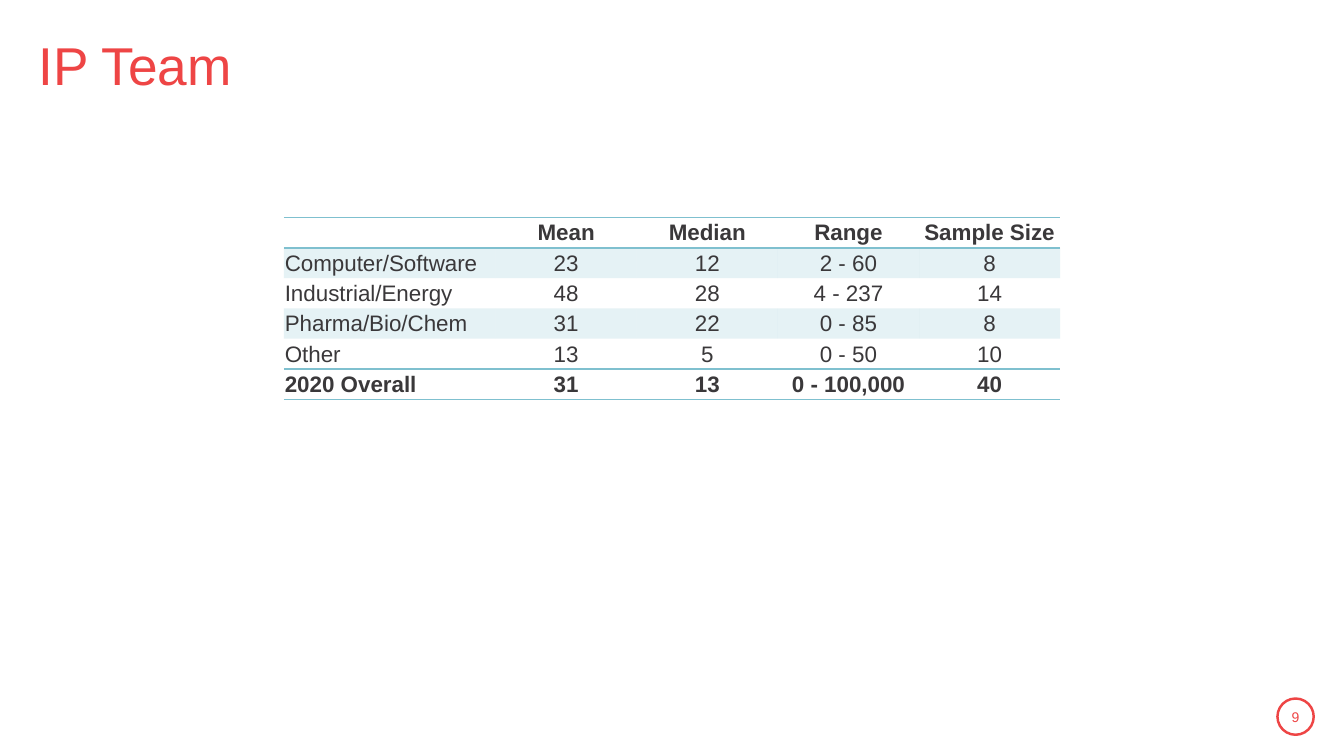
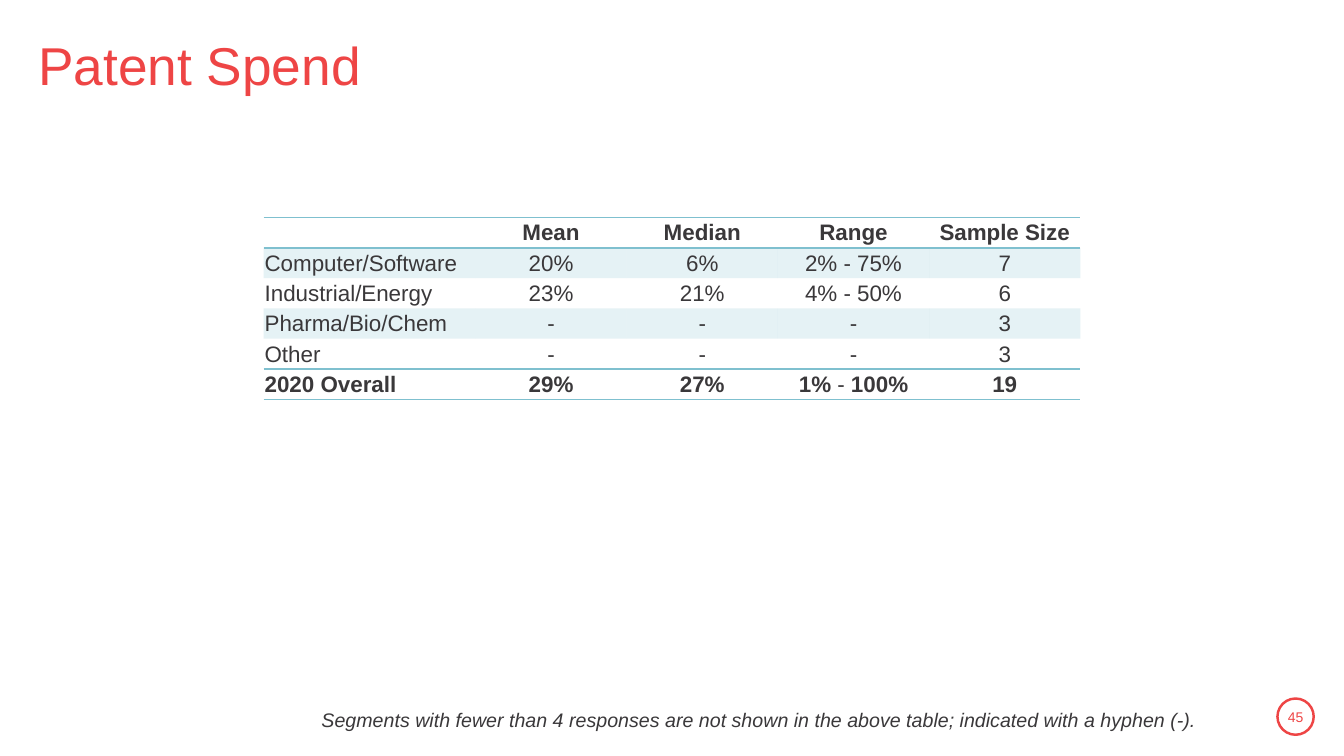
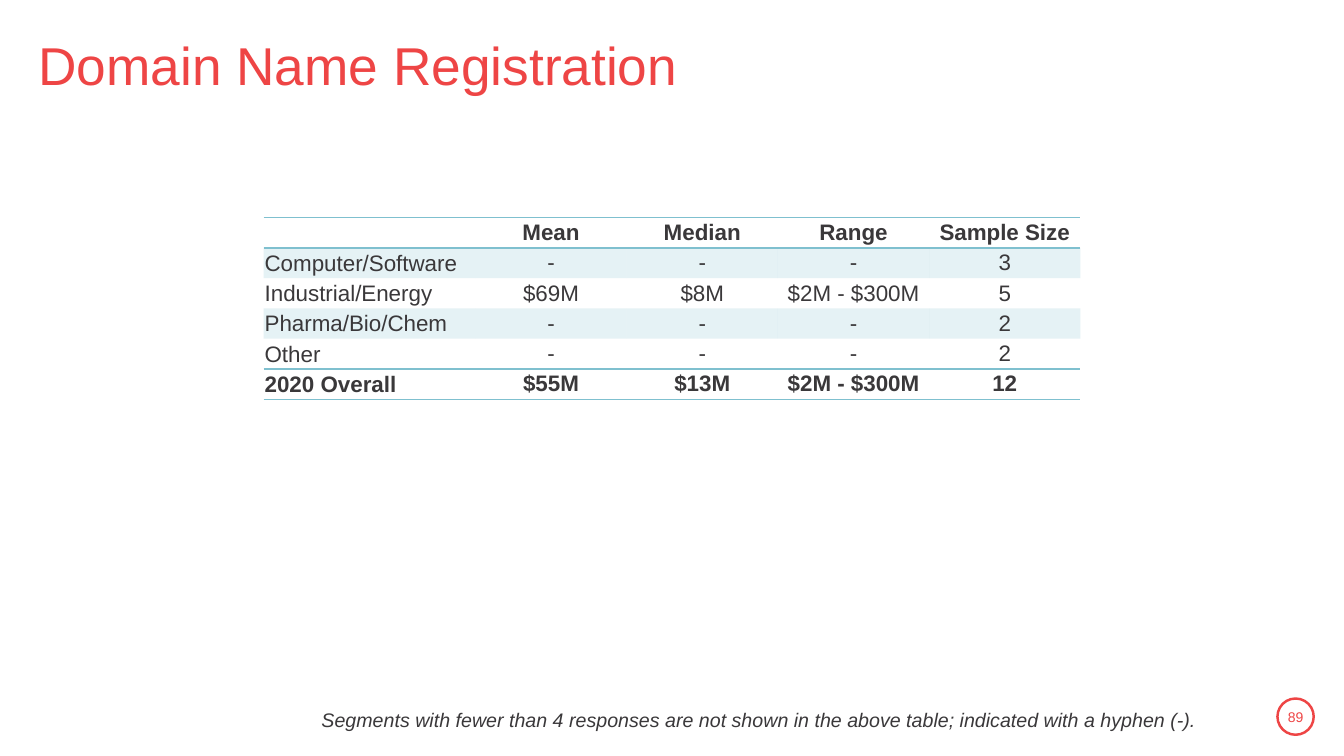
from dataclasses import dataclass

from lxml import etree
from pptx import Presentation
from pptx import util as u
from pptx.dml.color import RGBColor
from pptx.enum import shapes, text
from pptx.oxml import ns


@dataclass(frozen=True)
class Theme:
    font: str = "Arial"
    red: str = "EE4545"
    ink: str = "3A383A"
    teal: str = "7FC0CF"
    band_alpha: int = 20
    title_size: int = 38
    table_size: int = 16
    note_size: int = 14
    number_size: int = 10
    rule_width: float = 1
    badge_width: float = 1.75


@dataclass(frozen=True)
class Box:
    left: float
    top: float
    width: float
    height: float

    def lengths(self):
        return [u.Inches(n) for n in (self.left, self.top, self.width, self.height)]

    def centred(self, width, height):
        return Box(self.left + (self.width - width) / 2,
                   self.top + (self.height - height) / 2, width, height)


THEME = Theme()
PAGE = Box(0, 0, 13.33, 7.5)
TITLE = Box(0.28, 0.24, 12.82, 0.87)
BADGE = Box(12.67, 6.93, 0.36, 0.36)
NOTE = Box(3.09, 6.97, 8.95, 0.34)
TABLE_TOP = 2.16
ROW_HEIGHT = 0.3
LABEL_WIDTH = 2.1
CELL_INSET = 0.01
NO_GRID_STYLE = "{2D5ABB26-0587-4C30-8999-92F81FD0307C}"

HEADINGS = ["", "Mean", "Median", "Range", "Sample Size"]
SEGMENTS = ["Computer/Software", "Industrial/Energy", "Pharma/Bio/Chem", "Other", "2020 Overall"]
HYPHEN_NOTE = ("Segments with fewer than 4 responses are not shown in the above table; "
               "indicated with a hyphen (-).")

SURVEYS = [
    dict(title="IP Team", number=9, value_width=1.4, value_inset=CELL_INSET, note=None,
         values=[["23", "12", "2 - 60", "8"],
                 ["48", "28", "4 - 237", "14"],
                 ["31", "22", "0 - 85", "8"],
                 ["13", "5", "0 - 50", "10"],
                 ["31", "13", "0 - 100,000", "40"]]),
    dict(title="Patent Spend", number=45, value_width=1.5, value_inset=CELL_INSET,
         note=HYPHEN_NOTE,
         values=[["20%", "6%", "2% - 75%", "7"],
                 ["23%", "21%", "4% - 50%", "6"],
                 ["-", "-", "-", "3"],
                 ["-", "-", "-", "3"],
                 ["29%", "27%", ("1%", " - ", "100%"), "19"]]),
    dict(title="Domain Name Registration", number=89, value_width=1.5, value_inset=0,
         note=HYPHEN_NOTE,
         values=[["-", "-", "-", "3"],
                 ["$69M", "$8M", "$2M - $300M", "5"],
                 ["-", "-", "-", "2"],
                 ["-", "-", "-", "2"],
                 ["$55M", "$13M", "$2M - $300M", "12"]]),
]


def add_span(para, words, size, color, bold=False, italic=False):
    span = para.add_run()
    span.text = words
    font = span.font
    font.name, font.size, font.bold, font.italic = THEME.font, u.Pt(size), bold, italic
    font.color.rgb = RGBColor.from_string(color)


def place(shape, box):
    shape.left, shape.top, shape.width, shape.height = box.lengths()


def write_title(page, words, box):
    title = page.shapes.title
    place(title, box)
    frame = title.text_frame
    frame.auto_size = text.MSO_AUTO_SIZE.NONE
    frame.vertical_anchor = text.MSO_ANCHOR.MIDDLE
    para = frame.paragraphs[0]
    para.alignment = text.PP_ALIGN.LEFT
    para.line_spacing = 0.9
    add_span(para, words, THEME.title_size, THEME.red)


def add_text(page, words, box, size, color, italic=False, centred=False):
    frame = page.shapes.add_textbox(*box.lengths()).text_frame
    frame.word_wrap = True
    para = frame.paragraphs[0]
    if centred:
        frame.vertical_anchor = text.MSO_ANCHOR.MIDDLE
        para.alignment = text.PP_ALIGN.CENTER
    add_span(para, words, size, color, italic=italic)


def add_page_badge(page, number, box):
    ring = page.shapes.add_shape(shapes.MSO_SHAPE.OVAL, *box.lengths())
    ring.shadow.inherit = False
    ring.fill.background()
    ring.line.color.rgb = RGBColor.from_string(THEME.red)
    ring.line.width = u.Pt(THEME.badge_width)
    add_text(page, str(number), box.centred(0.46, 0.4), THEME.number_size, THEME.red,
             centred=True)


def add_rules(cell):
    properties = cell._tc.get_or_add_tcPr()
    for position, edge in enumerate(("a:lnT", "a:lnB")):
        line = etree.Element(ns.qn(edge), w=str(u.Pt(THEME.rule_width)))
        fill = etree.SubElement(line, ns.qn("a:solidFill"))
        etree.SubElement(fill, ns.qn("a:srgbClr"), val=THEME.teal)
        properties.insert(position, line)


def fill_cell(cell, shaded):
    if not shaded:
        cell.fill.background()
        return
    cell.fill.solid()
    cell.fill.fore_color.rgb = RGBColor.from_string(THEME.teal)
    color = next(cell._tc.get_or_add_tcPr().iter(ns.qn("a:srgbClr")))
    etree.SubElement(color, ns.qn("a:alpha"), val=str(THEME.band_alpha * 1000))


def write_cell(cell, value, bold, centred, inset):
    cell.margin_left = cell.margin_right = cell.margin_top = u.Inches(inset)
    cell.margin_bottom = 0
    cell.vertical_anchor = text.MSO_ANCHOR.MIDDLE
    para = cell.text_frame.paragraphs[0]
    para.alignment = text.PP_ALIGN.CENTER if centred else text.PP_ALIGN.LEFT
    if not value:
        etree.SubElement(para._p, ns.qn("a:endParaRPr"), sz=str(THEME.table_size * 100))
        return
    pieces = value if isinstance(value, tuple) else (value,)
    for index, piece in enumerate(pieces):
        add_span(para, piece, THEME.table_size, THEME.ink, bold=bold and index % 2 == 0)


def add_survey_table(page, values, value_width, value_inset, area):
    rows = [HEADINGS] + [[name] + line for name, line in zip(SEGMENTS, values)]
    widths = [LABEL_WIDTH] + [value_width] * (len(HEADINGS) - 1)
    total = sum(widths)
    box = Box(area.left + (area.width - total) / 2, TABLE_TOP, total, ROW_HEIGHT * len(rows))
    holder = page.shapes.add_table(len(rows), len(widths), *box.lengths())
    table = holder.table
    table.first_row = table.horz_banding = False
    next(holder.element.iter(ns.qn("a:tableStyleId"))).text = NO_GRID_STYLE
    for column, width in zip(table.columns, widths):
        column.width = u.Inches(width)
    for y, row in enumerate(rows):
        table.rows[y].height = u.Inches(ROW_HEIGHT)
        header, ruled = y == 0, y in (0, len(rows) - 1)
        for x, value in enumerate(row):
            cell = table.cell(y, x)
            inset = 0 if header else value_inset if x else CELL_INSET
            write_cell(cell, value, ruled, x > 0, inset)
            fill_cell(cell, not ruled and y % 2 == 1)
            if ruled:
                add_rules(cell)


def add_survey_page(deck, title, number, values, value_width, value_inset, note):
    page = deck.slides.add_slide(deck.slide_layouts.get_by_name("Title Only"))
    write_title(page, title, TITLE)
    add_page_badge(page, number, BADGE)
    add_survey_table(page, values, value_width, value_inset, PAGE)
    if note:
        add_text(page, note, NOTE, THEME.note_size, THEME.ink, italic=True)


def main():
    deck = Presentation()
    deck.slide_width, deck.slide_height = u.Inches(PAGE.width), u.Inches(PAGE.height)
    for survey in SURVEYS:
        add_survey_page(deck, **survey)
    deck.save("out.pptx")


if __name__ == "__main__":
    main()
